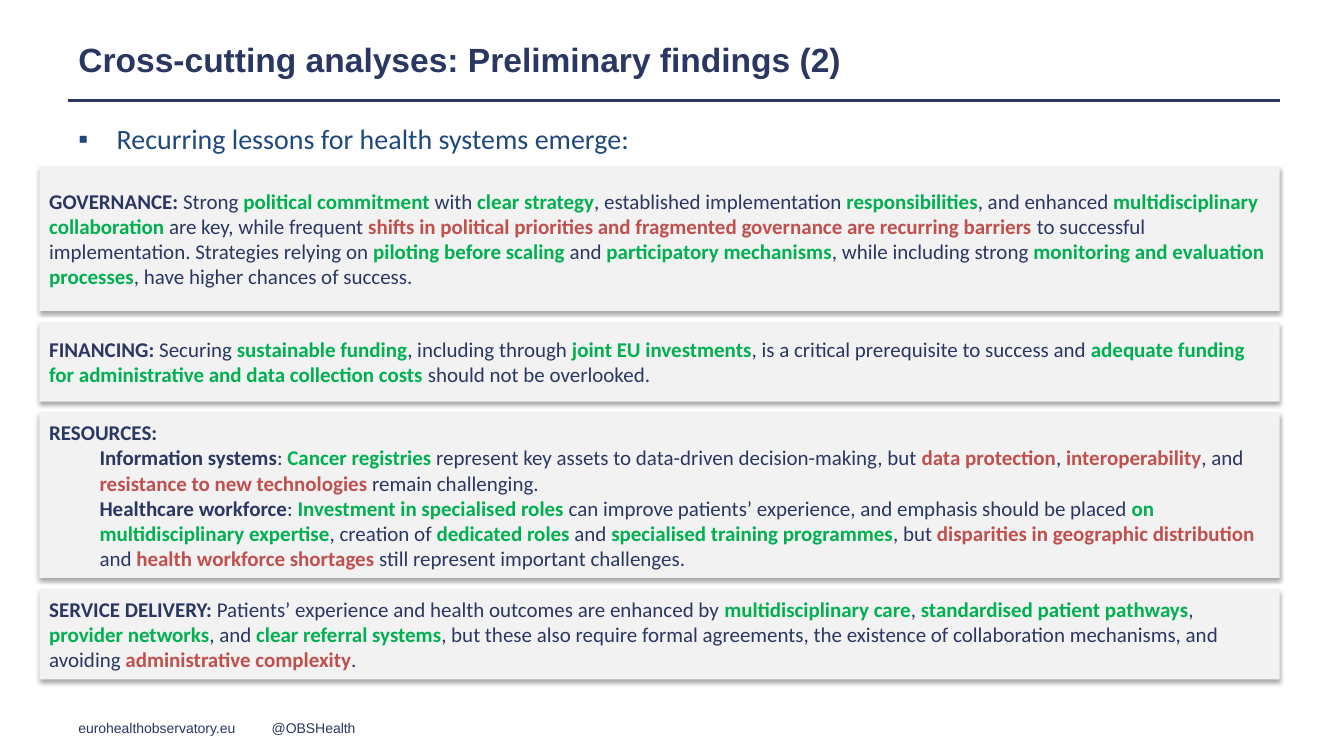
"""Build the slide of recurring lessons for health systems."""
from dataclasses import dataclass
from typing import Any

from lxml.etree import SubElement
from pptx import Presentation
from pptx.dml.color import RGBColor
from pptx.enum.shapes import MSO_CONNECTOR as Connector, MSO_SHAPE as Shape
from pptx.enum.text import MSO_ANCHOR as Anchor, MSO_AUTO_SIZE as AutoSize, PP_ALIGN as Align
from pptx.oxml.ns import qn
from pptx.util import Inches, Pt


@dataclass(frozen=True)
class Theme:
    navy: str = "293762"
    blue: str = "1F497D"
    green: str = "00B050"
    red: str = "C0504D"
    panel: str = "F2F2F2"
    shadow: str = "000000"
    heading_font: str = "Arial"
    body_font: str = "Calibri"
    title_size: int = 24
    lead_size: int = 20
    panel_size: int = 15
    footer_size: int = 10


@dataclass(frozen=True)
class Label:
    text: str
    left: float
    top: float
    width: float
    height: float
    size: int
    font: str
    color: str
    bold: bool = False
    bullet: str = ""
    grow: bool = True


@dataclass(frozen=True)
class Panel:
    height: float
    paragraphs: tuple[str, ...]


THEME = Theme()
MARGIN, RIGHT, RULE_TOP = 0.68, 12.71, 1
PANEL_LEFT, PANEL_TOP, PANEL_GAP = 0.39, 1.65, 0.11
INDENT, BULLET_INDENT = 0.5, 0.38
MARKS = {"#": THEME.navy, "+": THEME.green, "!": THEME.red}

LABELS = (
    Label("eurohealthobservatory.eu", MARGIN, 7.1, 2.13, 0.27,
          THEME.footer_size, THEME.heading_font, THEME.navy),
    Label("@OBSHealth", 2.6, 7.1, 1.48, 0.27,
          THEME.footer_size, THEME.heading_font, THEME.navy),
    Label("Cross-cutting analyses: Preliminary findings (2)", MARGIN, 0.34, RIGHT - MARGIN, 0.47,
          THEME.title_size, THEME.heading_font, THEME.navy, bold=True, grow=False),
    Label("Recurring lessons for health systems emerge:", MARGIN, 1.16, 7.62, 0.44,
          THEME.lead_size, THEME.body_font, THEME.blue, bullet="▪"),
)

PANELS = (
    Panel(1.44, (
        "#GOVERNANCE: |Strong |+political commitment |with |+clear strategy|, established "
        "implementation |+responsibilities|, and enhanced |+multidisciplinary collaboration |"
        "are key, while frequent |!shifts in political priorities and fragmented governance are "
        "recurring barriers |to successful implementation. Strategies relying on |+piloting "
        "before scaling |and |+participatory mechanisms|, while including strong |+monitoring "
        "and evaluation processes|, have higher chances of success.",
    )),
    Panel(0.79, (
        "#FINANCING: |Securing |+sustainable funding|, including through |+joint EU investments|"
        ", is a critical prerequisite to success and |+adequate funding for administrative and "
        "data collection costs| should not be overlooked.",
    )),
    Panel(1.64, (
        "#RESOURCES:",
        "#Information systems|: |+Cancer registries |represent key assets to data-driven "
        "decision-making, but |!data protection|, |!interoperability|, and |!resistance to new "
        "technologies |remain challenging.",
        "#Healthcare workforce|: |+Investment in specialised roles |can improve patients’ "
        "experience, and emphasis should be placed |+on multidisciplinary expertise|, creation "
        "of |+dedicated roles |and |+specialised training programmes|, but |!disparities in "
        "geographic distribution |and |!health workforce shortages| still represent important "
        "challenges.",
    )),
    Panel(0.9, (
        "#SERVICE DELIVERY: |Patients’ experience and health outcomes are enhanced by |"
        "+multidisciplinary care|, |+standardised patient pathways|, |+provider networks|, and |"
        "+clear referral systems|, but these also require formal agreements, the existence of "
        "collaboration mechanisms, and avoiding |!administrative complexity|.",
    )),
)


def apply(target: Any, formats: dict[str, Any]) -> None:
    """Set each named format value on the target."""
    for name, value in formats.items():
        setattr(target, name, value)


def add_span(para: Any, text: str, size: int, font: str, color: str, bold: bool) -> None:
    """Append one formatted run to a paragraph."""
    span = para.add_run()
    span.text = text
    apply(span.font, {"size": Pt(size), "name": font, "bold": bold})
    span.font.color.rgb = RGBColor.from_string(color)


def indent(para: Any, left: float, first: float) -> Any:
    """Indent a paragraph and return its properties element."""
    properties = para._p.get_or_add_pPr()
    properties.set("marL", str(Inches(left)))
    properties.set("indent", str(Inches(first)))
    return properties


def add_label(page: Any, label: Label) -> None:
    """Draw a single-line text box."""
    box = page.shapes.add_textbox(
        Inches(label.left), Inches(label.top), Inches(label.width), Inches(label.height))
    fit = AutoSize.SHAPE_TO_FIT_TEXT if label.grow else AutoSize.NONE
    apply(box.text_frame, {"word_wrap": True, "auto_size": fit})
    para = box.text_frame.paragraphs[0]
    if label.bullet:
        properties = indent(para, BULLET_INDENT, -BULLET_INDENT)
        SubElement(properties, qn("a:buFont"), typeface=THEME.heading_font)
        SubElement(properties, qn("a:buChar"), char=label.bullet)
    add_span(para, label.text, label.size, label.font, label.color, label.bold)


def add_rule(page: Any) -> None:
    """Draw the line under the title."""
    rule = page.shapes.add_connector(
        Connector.STRAIGHT, Inches(MARGIN), Inches(RULE_TOP), Inches(RIGHT), Inches(RULE_TOP))
    rule.line.color.rgb = RGBColor.from_string(THEME.navy)
    rule.line.width = Pt(2)
    SubElement(rule._element.spPr, qn("a:effectLst"))


def add_shadow(box: Any) -> None:
    """Give a box a soft shadow straight below it."""
    box.shadow.inherit = False
    effects = box._element.spPr.find(qn("a:effectLst"))
    shadow = SubElement(effects, qn("a:outerShdw"), blurRad=str(Pt(3.1)), dist=str(Pt(1.8)),
                        dir="5400000", rotWithShape="0")
    color = SubElement(shadow, qn("a:srgbClr"), val=THEME.shadow)
    SubElement(color, qn("a:alpha"), val="35000")


def add_panel(page: Any, panel: Panel, top: float) -> None:
    """Draw a shaded panel with its marked-up paragraphs."""
    box = page.shapes.add_shape(Shape.RECTANGLE, Inches(PANEL_LEFT), Inches(top),
                                Inches(RIGHT - PANEL_LEFT), Inches(panel.height))
    box.fill.solid()
    box.fill.fore_color.rgb = RGBColor.from_string(THEME.panel)
    box.line.fill.background()
    add_shadow(box)
    frame = box.text_frame
    apply(frame, {"word_wrap": True, "vertical_anchor": Anchor.MIDDLE})
    for number, text in enumerate(panel.paragraphs):
        para = frame.add_paragraph() if number else frame.paragraphs[0]
        para.alignment = Align.LEFT
        if number:
            para.level = 1
            indent(para, INDENT, 0)
        for part in text.split("|"):
            marked = part[0] in MARKS
            add_span(para, part[1:] if marked else part, THEME.panel_size, THEME.body_font,
                     MARKS.get(part[0], THEME.navy), marked)


def main() -> None:
    """Build and save the deck."""
    deck = Presentation()
    apply(deck, {"slide_width": Inches(13.35), "slide_height": Inches(7.5)})
    page = deck.slides.add_slide(deck.slide_layouts[6])
    add_rule(page)
    for label in LABELS:
        add_label(page, label)
    top = PANEL_TOP
    for panel in PANELS:
        add_panel(page, panel, top)
        top += panel.height + PANEL_GAP
    deck.save("out.pptx")


if __name__ == "__main__":
    main()
